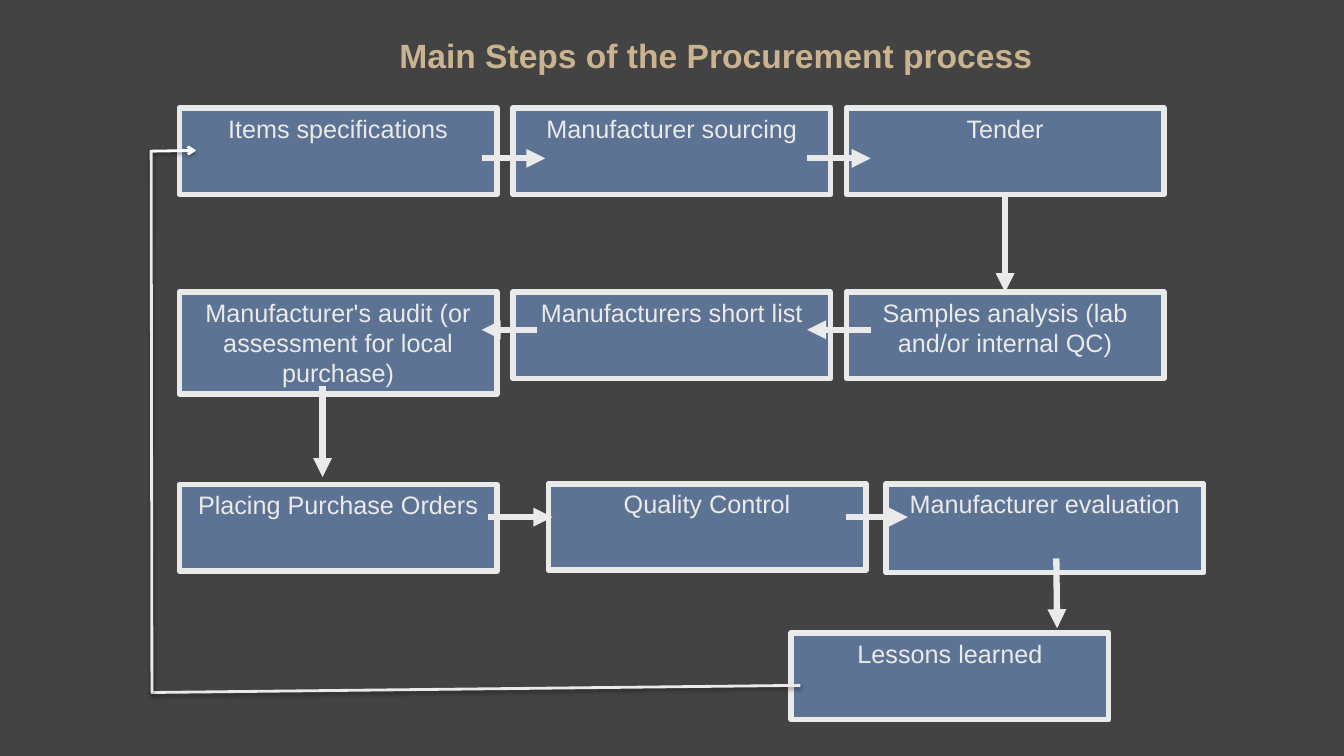
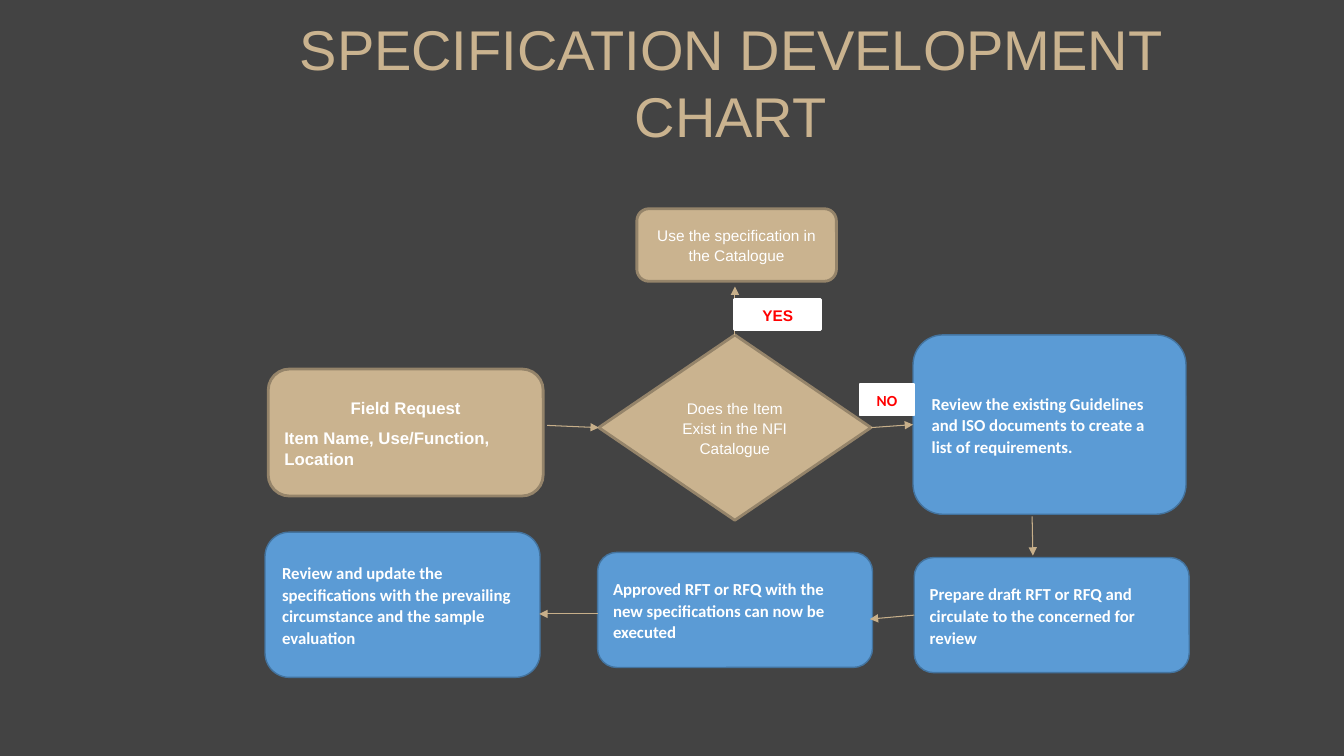
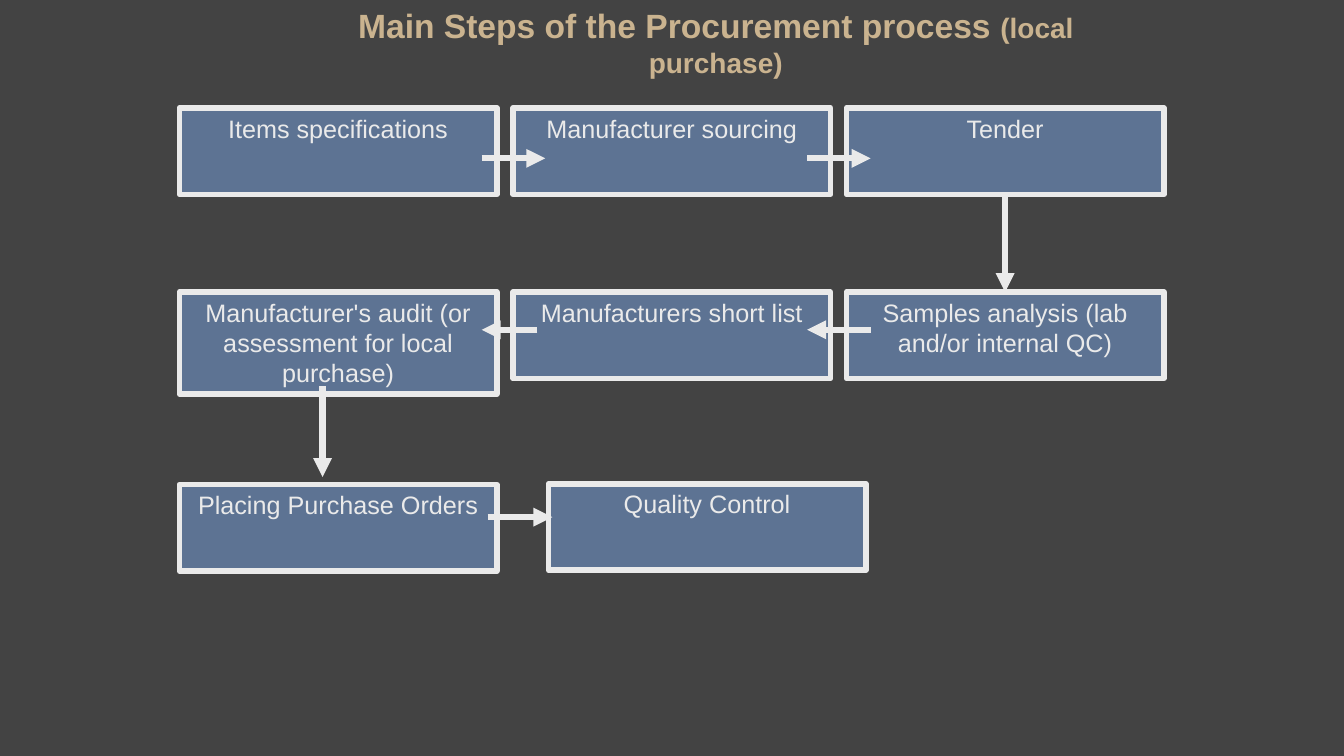
from lxml import etree
from pptx import Presentation
from pptx.dml.color import RGBColor
from pptx.enum.shapes import MSO_CONNECTOR, MSO_SHAPE
from pptx.enum.text import MSO_ANCHOR, MSO_AUTO_SIZE, PP_ALIGN
from pptx.oxml import parse_xml
from pptx.oxml.ns import nsdecls, qn
from pptx.util import Cm, Pt

RECT, ROUND, DIAMOND = MSO_SHAPE.RECTANGLE, MSO_SHAPE.ROUNDED_RECTANGLE, MSO_SHAPE.DIAMOND
STRAIGHT = MSO_CONNECTOR.STRAIGHT
CENTER, LEFT = PP_ALIGN.CENTER, PP_ALIGN.LEFT
TOP, MIDDLE = MSO_ANCHOR.TOP, MSO_ANCHOR.MIDDLE
NO_FIT = MSO_AUTO_SIZE.NONE

CHARCOAL, SAND, SAND_EDGE, SAND_LINE = "434343", "CAB38F", "95846A", "C7AF8A"
SLATE, PALE, WHITE, RED = "5D7393", "EAEAEA", "FFFFFF", "FF0000"
SKY, SKY_EDGE = "5B9BD5", "43739E"
TITLE_ONLY = 5
STEP_W, STEP_H = 8.0, 2.18
PROCESS_TITLE_BOX = (7.92, 0.13, 20.24, 3.18)
PROCESS_ORIGIN = (4.52, 2.72)


def color(hex_code):
    """Turn a hex string into a colour."""
    return RGBColor.from_string(hex_code)


def add_run(paragraph, text, size, ink, bold=False, font="Arial"):
    """Append one formatted run to a paragraph."""
    run = paragraph.add_run()
    run.text = text
    run.font.name, run.font.size, run.font.bold = font, Pt(size), bold
    run.font.color.rgb = color(ink)


def add_titled_slide(prs, box, runs, inset=0):
    """Add a slide whose title holds runs of (text, size, bold)."""
    slide = prs.slides.add_slide(prs.slide_layouts[TITLE_ONLY])
    title = slide.shapes.title
    title.left, title.top, title.width, title.height = map(Cm, box)
    frame = title.text_frame
    frame.auto_size, frame.vertical_anchor, frame.margin_top = NO_FIT, TOP, Cm(inset)
    paragraph = frame.paragraphs[0]
    paragraph.alignment = CENTER
    for text, size, bold in runs:
        add_run(paragraph, text, size, SAND, bold)
    return slide


def add_panel(slide, origin, box, kind, fill, edge, weight, anchor=MIDDLE):
    """Place an empty filled shape at a box measured from the origin."""
    x, y, width, height = box
    panel = slide.shapes.add_shape(
        kind, Cm(origin[0] + x), Cm(origin[1] + y), Cm(width), Cm(height))
    panel.shadow.inherit = False
    panel.fill.solid()
    panel.fill.fore_color.rgb = color(fill)
    panel.line.color.rgb = color(edge)
    panel.line.width = Pt(weight)
    frame = panel.text_frame
    frame.word_wrap, frame.auto_size, frame.vertical_anchor = True, NO_FIT, anchor
    return panel


def add_line(slide, origin, ends, ink, weight, head=None, shadow=False):
    """Draw a straight line, with an optional arrowhead and soft shadow."""
    x1, y1, x2, y2 = ends
    line = slide.shapes.add_connector(
        STRAIGHT, Cm(origin[0] + x1), Cm(origin[1] + y1),
        Cm(origin[0] + x2), Cm(origin[1] + y2))
    line.line.color.rgb = color(ink)
    line.line.width = Pt(weight)
    if head:
        etree.SubElement(line.line._get_or_add_ln(), qn("a:tailEnd"), type=head)
    effects = parse_xml(f"<a:effectLst {nsdecls('a')}/>")
    if shadow:
        outer = etree.SubElement(
            effects, qn("a:outerShdw"), blurRad=str(Pt(3.1)), dist=str(Pt(1.6)),
            dir="5400000", rotWithShape="0")
        black = etree.SubElement(outer, qn("a:srgbClr"), val="000000")
        etree.SubElement(black, qn("a:alpha"), val="38000")
    line._element.spPr.append(effects)
    return line


def add_step(slide, origin, text, x, y, height=STEP_H):
    """Place one procurement step."""
    step = add_panel(slide, origin, (x, y, STEP_W, height), RECT, SLATE, PALE, 4, TOP)
    paragraph = step.text_frame.paragraphs[0]
    paragraph.alignment = CENTER
    add_run(paragraph, text, 18, PALE)
    return step


def add_step_arrows(slide, origin, arrows):
    """Draw the thick arrows between procurement steps."""
    return [add_line(slide, origin, ends, PALE, 4.5, "triangle") for ends in arrows]


def add_common_process(slide, origin):
    """Draw the eight steps that every procurement process has."""
    columns = [0, 8.41, 16.81]
    for text, x in zip(("Items specifications", "Manufacturer sourcing"), columns):
        add_step(slide, origin, text, x, 0)
    tender = add_step(slide, origin, "Tender", columns[2], 0)
    samples = add_step(
        slide, origin, "Samples analysis (lab and/or internal QC)", columns[2], 4.64)
    add_step(slide, origin, "Manufacturers short list", columns[1], 4.64)
    add_step(slide, origin, "Manufacturer's audit (or assessment for local purchase)",
             columns[0], 4.64, 2.57)
    add_step(slide, origin, "Placing Purchase Orders", 0, 9.49)
    add_step(slide, origin, "Quality Control", 9.3, 9.47)
    to_samples = add_step_arrows(slide, origin, [
        (20.81, 2.18, 20.81, 4.64),
        (7.62, 1.27, 9.22, 1.27),
        (15.82, 1.27, 17.42, 1.27),
        (17.42, 5.59, 15.82, 5.59),
        (9.02, 5.59, 7.62, 5.59),
        (3.61, 7.01, 3.61, 9.3),
        (7.77, 10.31, 9.4, 10.31),
    ])[0]
    to_samples.begin_connect(tender, 2)
    to_samples.end_connect(samples, 0)


def add_learning_loop(slide, origin):
    """Add evaluation, lessons learned and the line back to the first step."""
    add_step(slide, origin, "Manufacturer evaluation", 17.81, 9.47, 2.24)
    add_step(slide, origin, "Lessons learned", 15.42, 13.23)
    add_step_arrows(slide, origin, [
        (16.81, 10.31, 18.36, 10.31), (22.1, 11.35, 22.12, 13.11)])
    add_line(slide, origin, (15.65, 14.55, -0.71, 14.73), PALE, 2, shadow=True)
    add_line(slide, origin, (-0.74, 1.09, 0.43, 1.07), WHITE, 2, "arrow", True)
    add_line(slide, origin, (-0.71, 1.09, -0.69, 14.73), PALE, 2, shadow=True)


def add_node(slide, origin, box, look, paragraphs, size, bold, after, font="Arial"):
    """Place a chart node with paragraphs of (text, alignment)."""
    kind, fill, edge, weight, ink = look
    node = add_panel(slide, origin, box, kind, fill, edge, weight)
    frame = node.text_frame
    for index, (text, alignment) in enumerate(paragraphs):
        paragraph = frame.add_paragraph() if index else frame.paragraphs[0]
        paragraph.alignment = alignment
        paragraph.line_spacing, paragraph.space_after = 1.07, Pt(after)
        add_run(paragraph, text, size, ink, bold, font)
    return node


def add_specification_chart(slide, origin):
    """Draw the decision chart for developing a specification."""
    request = (ROUND, SAND, SAND_EDGE, 2, WHITE)
    decision = (DIAMOND, SAND, SAND_EDGE, 2, WHITE)
    task = (ROUND, SKY, SKY_EDGE, 1, WHITE)

    add_node(slide, origin, (0.08, 4.04, 6.93, 3.2), request,
             [("Field Request", CENTER), ("Item Name, Use/Function, Location", LEFT)],
             12, True, 6)
    add_node(slide, origin, (9.37, 0, 5.03, 1.83), request,
             [("Use the specification in the Catalogue", CENTER)], 11, False, 8)
    question = add_node(slide, origin, (8.41, 3.18, 6.86, 4.67), decision,
                        [("Does the Item Exist in the NFI Catalogue", CENTER)],
                        11, False, 8)
    tasks = [
        ((16.33, 3.18, 6.88, 4.52), "Review the existing Guidelines and ISO documents "
                                    "to create a list of requirements."),
        ((16.36, 8.79, 6.93, 2.9), "Prepare draft RFT or RFQ and circulate to the "
                                   "concerned for review"),
        ((8.38, 8.66, 6.93, 2.9), "Approved RFT or RFQ with the new specifications "
                                  "can now be executed"),
        ((0, 8.15, 6.93, 3.66), "Review and update the specifications with the "
                                "prevailing circumstance and the sample evaluation"),
    ]
    review, draft = [
        add_node(slide, origin, box, task, [(text, LEFT)], 12, True, 6, "Calibri")
        for box, text in tasks][:2]

    to_question, to_catalogue, to_review, _, to_approved, _ = [
        add_line(slide, origin, ends, SAND_LINE, 0.75, "triangle") for ends in (
            (7.11, 5.46, 8.41, 5.46),
            (11.84, 3.18, 11.84, 1.96),
            (15.27, 5.49, 16.33, 5.54),
            (19.33, 7.75, 19.35, 8.74),
            (16.36, 10.31, 15.24, 10.34),
            (8.38, 10.21, 6.91, 10.21),
        )]
    to_question.end_connect(question, 1)
    to_catalogue.begin_connect(question, 0)
    to_review.begin_connect(question, 3)
    to_review.end_connect(review, 1)
    to_approved.begin_connect(draft, 1)

    for answer, box, weight, font in (
            ("YES", (11.84, 2.29, 2.16, 0.76), 2, "Arial"),
            ("NO", (14.99, 4.42, 1.37, 0.79), 1, "Calibri")):
        add_node(slide, origin, box, (RECT, WHITE, WHITE, weight, RED),
                 [(answer, CENTER)], 11, True, 8, font)


def main():
    """Build and save the three slides."""
    prs = Presentation()
    prs.slide_width, prs.slide_height = Cm(33.87), Cm(19.05)
    backdrop = prs.slide_master.background.fill
    backdrop.solid()
    backdrop.fore_color.rgb = color(CHARCOAL)

    process = add_titled_slide(
        prs, PROCESS_TITLE_BOX, [("Main Steps of the Procurement process", 24, True)], 0.74)
    add_common_process(process, PROCESS_ORIGIN)
    add_learning_loop(process, PROCESS_ORIGIN)

    specification = add_titled_slide(
        prs, (4.93, 0.36, 26.97, 3.18), [("SPECIFICATION DEVELOPMENT CHART", 40, False)])
    add_specification_chart(specification, (6.68, 5.26))

    local = add_titled_slide(
        prs, PROCESS_TITLE_BOX,
        [("Main Steps of the Procurement process ", 24, True), ("(local purchase)", 20, True)])
    add_common_process(local, PROCESS_ORIGIN)

    prs.save("out.pptx")


if __name__ == "__main__":
    main()
